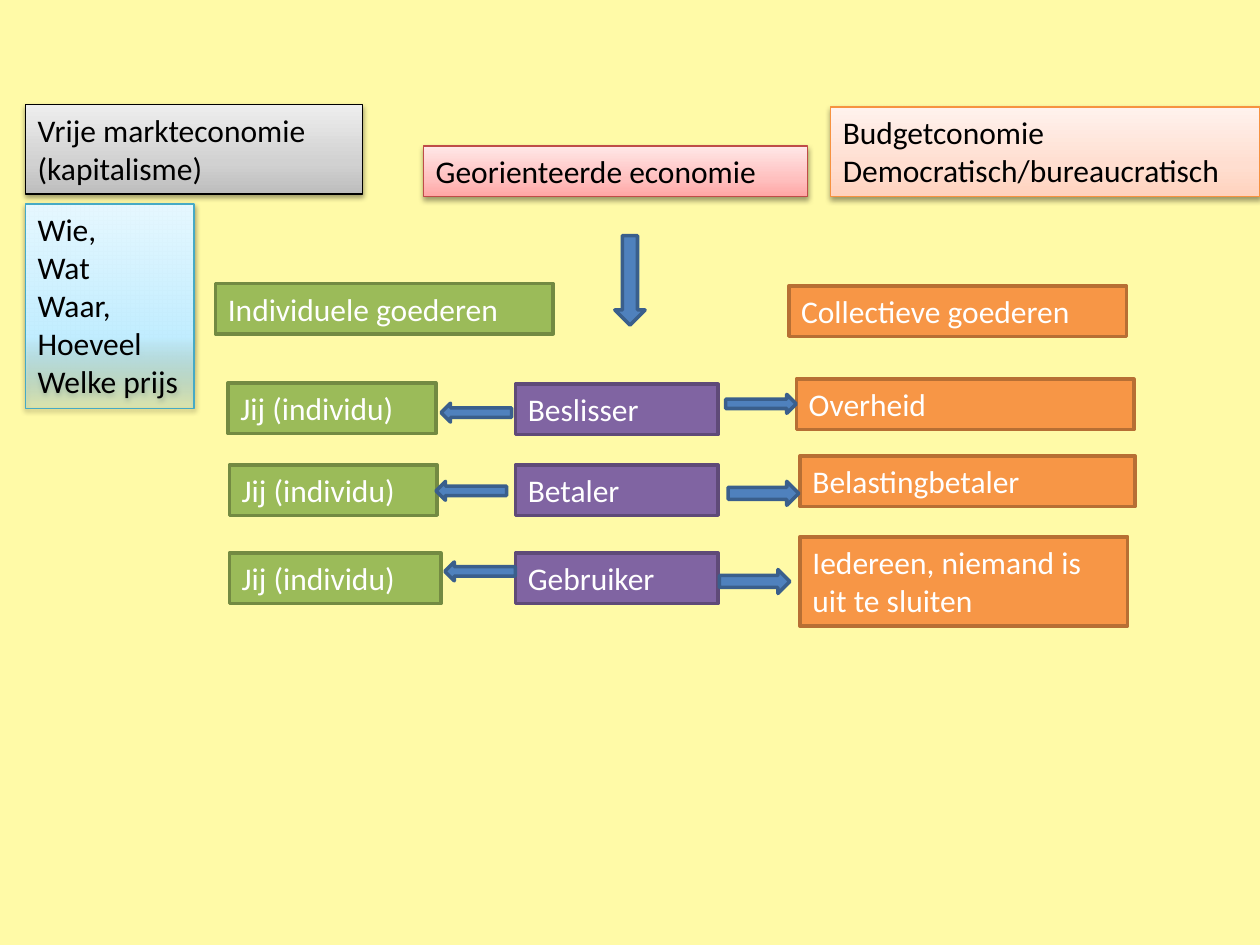
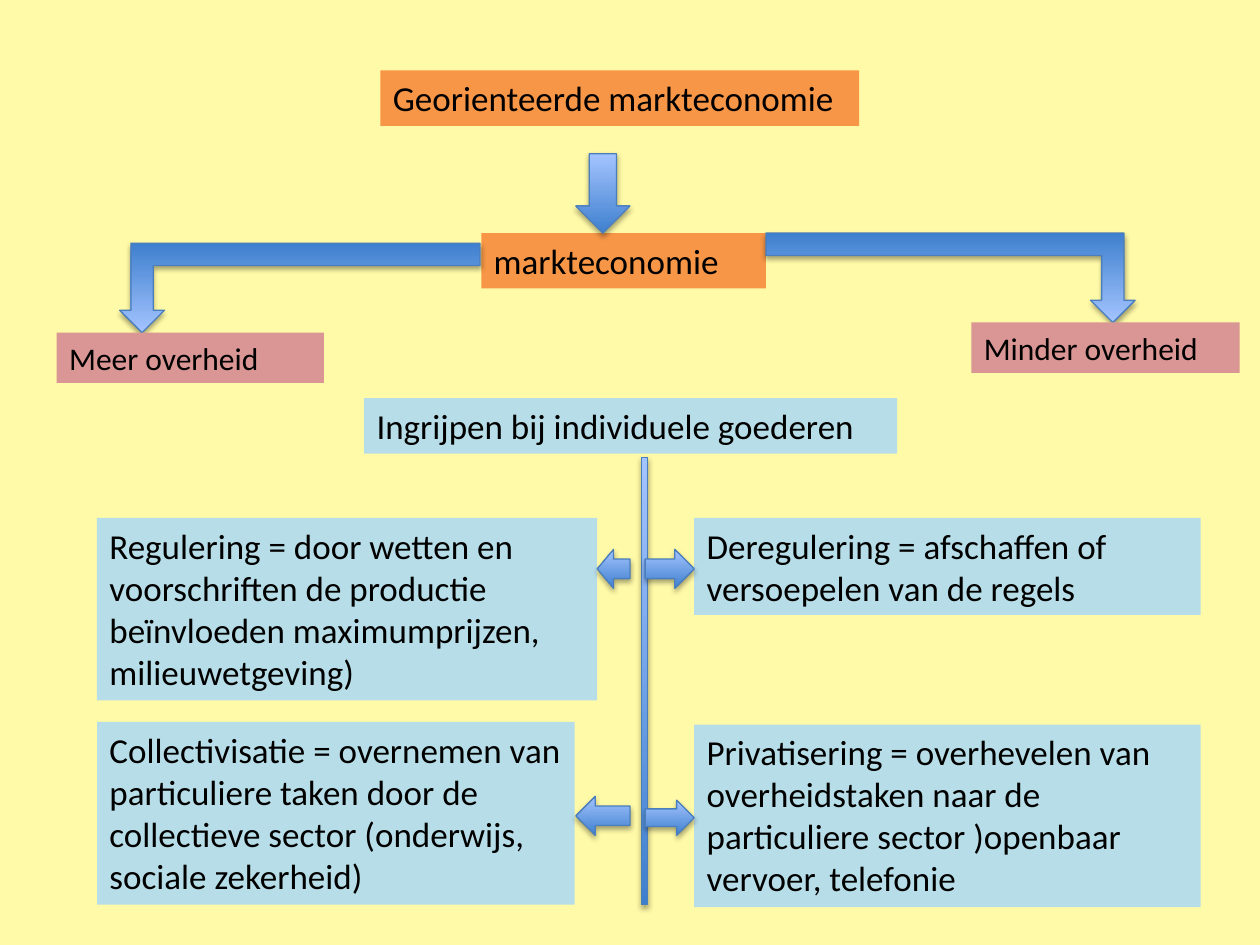
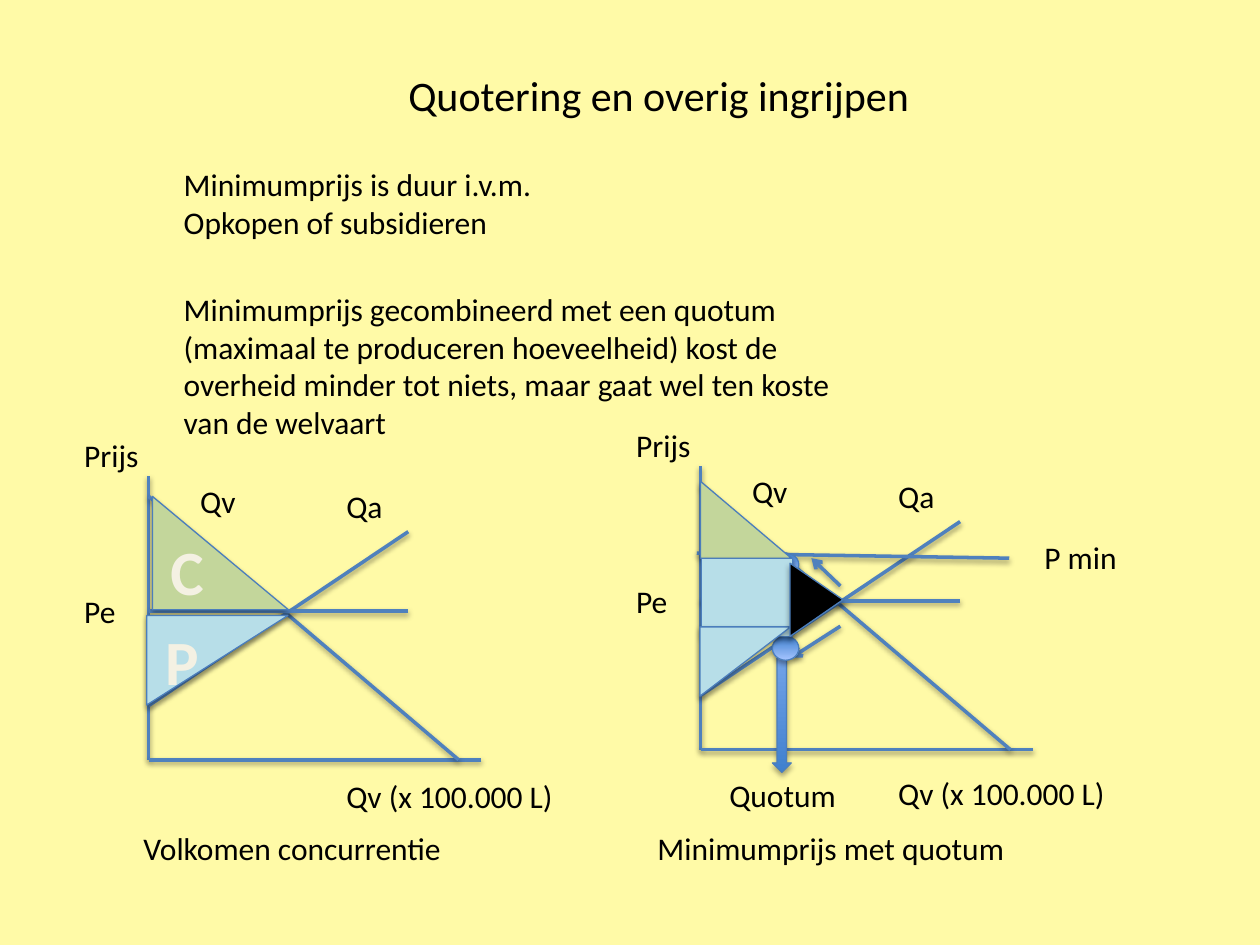
from dataclasses import dataclass

from lxml.etree import SubElement
from pptx import Presentation
from pptx.dml.color import RGBColor
from pptx.enum.shapes import MSO_CONNECTOR, MSO_SHAPE as SHAPE
from pptx.enum.text import MSO_ANCHOR, MSO_AUTO_SIZE, PP_ALIGN
from pptx.oxml.ns import qn
from pptx.util import Inches, Pt

COLUMNS, ROWS = 100, 75
CELL = Inches(0.1)
BACKGROUND = "FFFAA7"
INK = "000000"
AXIS_BLUE = "4F81BD"
OUTLINE_BLUE = "4B7EBC"
SOFT = (38, 3.1, 1.6)
DEEP = (35, 3.1, 1.8)


def gradient(*stops):
    return [(share, colour, alpha) for (share, colour), alpha in
            zip(stops, [100] * len(stops))]


def bright(colours, line, foot_alpha=100):
    stops = gradient(*zip((0, 35, 100), colours))
    stops[0] = (0, colours[0], foot_alpha)
    return dict(fill=stops, line=line, width=0.75, shadow=SOFT)


def outlined(fill, line):
    return dict(fill=fill, line=line, width=2, ink="FFFFFF")


def raised(fill):
    return dict(fill=fill, line=OUTLINE_BLUE, width=0.75, shadow=DEEP)


INDIVIDUAL = outlined("9BBB59", "738A42")
COLLECTIVE = outlined("F79646", "B76F34")
ROLE = outlined("8064A2", "5F4A78")
POINTER = outlined(AXIS_BLUE, "3A5F8C")
FREE_MARKET = bright(("BDBDBD", "D1D1D1", "EEEEEE"), "000000")
ORIENTED = bright(("FFA6A5", "FFC0BF", "FFE7E7"), "BF4C48")
BUDGET = bright(("FFD2BD", "FFDED0", "FFF2ED"), "F69240")
QUESTIONS = bright(("A7E6FF", "C1EDFF", "E7F8FF"), "46AAC5", 18)
FLOW = raised(gradient((0, "3F80CE"), (100, "A4C4FF")))
CONSUMER = raised("C3D69B")
PRODUCER = raised("B7DEE8")
LOSS = raised("000000")
ECONOMY = dict(fill="F79646", size=20)
MEASURE = dict(fill="B7DEE8", size=20)
DIRECTION = dict(fill="D99694")


def rgb(colour):
    return RGBColor.from_string(colour)


def add_gradient(shape, stops):
    shape.fill.gradient()
    shape.fill.gradient_angle = 90
    stop_list = shape.element.spPr.find(qn("a:gradFill")).find(qn("a:gsLst"))
    for stop in list(stop_list):
        stop_list.remove(stop)
    for share, colour, alpha in stops:
        stop = SubElement(stop_list, qn("a:gs"), pos=str(share * 1000))
        tone = SubElement(stop, qn("a:srgbClr"), val=colour)
        if alpha < 100:
            SubElement(tone, qn("a:alpha"), val=str(alpha * 1000))


def add_shadow(effects, shadow):
    opacity, blur, distance = shadow
    outer = SubElement(effects, qn("a:outerShdw"), blurRad=str(Pt(blur)),
                       dist=str(Pt(distance)), dir="5400000", rotWithShape="0")
    tone = SubElement(outer, qn("a:srgbClr"), val=INK)
    SubElement(tone, qn("a:alpha"), val=str(opacity * 1000))


def write(holder, text, size=18, ink=INK, align=PP_ALIGN.LEFT, bold=False, wrap=True):
    frame = holder.text_frame
    frame.text = text
    layout = dict(word_wrap=wrap, auto_size=MSO_AUTO_SIZE.SHAPE_TO_FIT_TEXT,
                  vertical_anchor=MSO_ANCHOR.TOP)
    for key, value in layout.items():
        setattr(frame, key, value)
    for paragraph in frame.paragraphs:
        paragraph.alignment = align
        for run in paragraph.runs:
            for key, value in dict(name="Calibri", size=Pt(size), bold=bold).items():
                setattr(run.font, key, value)
            run.font.color.rgb = rgb(ink)


@dataclass
class Region:
    slide: object
    left: float = 0
    top: float = 0

    def at(self, left, top):
        return Region(self.slide, self.left + left, self.top + top)

    def point(self, x, y):
        return round((self.left + x) * CELL), round((self.top + y) * CELL)

    def frame(self, left, top, width, height):
        return *self.point(left, top), round(width * CELL), round(height * CELL)

    def shape(self, kind, box, style, text="", rotation=0, flip=None):
        shape = self.slide.shapes.add_shape(kind, *self.frame(*box))
        shape.rotation = rotation
        if flip:
            shape.element.spPr.find(qn("a:xfrm")).set(flip, "1")
        if isinstance(style["fill"], str):
            shape.fill.solid()
            shape.fill.fore_color.rgb = rgb(style["fill"])
        else:
            add_gradient(shape, style["fill"])
        if "line" in style:
            shape.line.color.rgb = rgb(style["line"])
            shape.line.width = Pt(style["width"])
        else:
            shape.line.fill.background()
        shape.shadow.inherit = False
        if "shadow" in style:
            add_shadow(shape.element.spPr.find(qn("a:effectLst")), style["shadow"])
        if text:
            write(shape, text, style.get("size", 18), style.get("ink", INK))

    def card(self, box, style, text):
        self.shape(SHAPE.RECTANGLE, box, style, text)

    def label(self, box, text, **formats):
        holder = self.slide.shapes.add_textbox(*self.frame(*box))
        write(holder, text, **formats)
        return holder

    def line(self, start, end, arrow=False):
        connector = self.slide.shapes.add_connector(
            MSO_CONNECTOR.STRAIGHT, *self.point(*start), *self.point(*end))
        connector.line.color.rgb = rgb(AXIS_BLUE)
        connector.line.width = Pt(2)
        properties = connector.element.spPr
        if arrow:
            SubElement(properties.find(qn("a:ln")), qn("a:tailEnd"), type="arrow")
        add_shadow(SubElement(properties, qn("a:effectLst")), SOFT)


def economic_systems(region):
    region.card((0, 0, 26.8, 7.1), FREE_MARKET, "Vrije markteconomie (kapitalisme)")
    region.card((31.6, 3.3, 30.5, 4), ORIENTED, "Georienteerde economie")
    region.card((63.9, 0.2, 34.1, 7.1), BUDGET,
                "Budgetconomie\nDemocratisch/bureaucratisch")
    region.card((0, 7.9, 13.4, 16.2), QUESTIONS,
                "Wie,\nWat\nWaar, Hoeveel\nWelke prijs")


def goods_column(region, style, heading, answers):
    region.card((0, 0, 26.8, 4), style, heading)
    for text, *box in answers:
        region.card(box, style, text)


def roles(region):
    for text, top in (("Beslisser", 0), ("Betaler", 6.4), ("Gebruiker", 13.4)):
        region.card((0, top, 16.1, 4), ROLE, text)
    region.shape(SHAPE.DOWN_ARROW, (7.9, -11.8, 2.4, 7.1), POINTER)
    for left, top, height in ((16.7, 0.8, 1.5), (16.9, 7.7, 1.9), (16.2, 14.7, 1.9)):
        region.shape(SHAPE.RIGHT_ARROW, (left, top, 5.6, height), POINTER)
    for left, top in ((-5.9, 1.5), (-6.3, 7.7), (-5.6, 14.1)):
        region.shape(SHAPE.RIGHT_ARROW, (left, top, 5.6, 1.5), POINTER, rotation=180)


def goods_slide(region):
    you = "Jij (individu)"
    goods_column(region.at(17.1, 22.5), INDIVIDUAL, "Individuele goederen", (
        (you, 1, 7.9, 16.5, 4),
        (you, 1.1, 14.4, 16.5, 4),
        (you, 1.1, 21.4, 16.8, 4)))
    goods_column(region.at(62.6, 22.7), COLLECTIVE, "Collectieve goederen", (
        ("Overheid", 0.6, 7.4, 26.8, 4),
        ("Belastingbetaler", 0.9, 13.5, 26.6, 4),
        ("Iedereen, niemand is uit te sluiten", 0.9, 19.9, 26, 7.1)))
    roles(region.at(40.9, 30.5))
    economic_systems(region.at(2, 8.3))


def market_directions(region):
    region.card((25.7, 0, 38, 4.4), ECONOMY, "Georienteerde markteconomie")
    region.card((33.7, 12.9, 22.6, 4.4), ECONOMY, "markteconomie")
    region.shape(SHAPE.BENT_UP_ARROW, (5, 13.7, 28.6, 7.1), FLOW, rotation=180)
    region.shape(SHAPE.BENT_UP_ARROW, (56.3, 12.9, 29.3, 7.1), FLOW,
                 rotation=180, flip="flipH")
    region.shape(SHAPE.DOWN_ARROW, (41.2, 6.6, 4.3, 6.3), FLOW)
    region.card((0, 20.8, 21.2, 4), DIRECTION, "Meer overheid")
    region.card((72.6, 20, 21.3, 4), DIRECTION, "Minder overheid")


def interventions(region):
    region.card((21.2, 0, 42.3, 4.4), MEASURE, "Ingrijpen bij individuele goederen")
    measures = (
        ("Regulering = door wetten en voorschriften de productie beïnvloeden "
         "maximumprijzen, milieuwetgeving)", 0, 9.5, 39.7, 14.5),
        ("Deregulering = afschaffen of versoepelen van de regels",
         47.4, 9.5, 40.2, 7.7),
        ("Collectivisatie = overnemen van particuliere taken door de "
         "collectieve sector (onderwijs, sociale zekerheid)", 0, 25.7, 37.9, 14.5),
        ("Privatisering = overhevelen van overheidstaken naar de particuliere "
         "sector )openbaar vervoer, telefonie", 47.4, 25.9, 40.2, 14.5))
    for text, *box in measures:
        region.card(box, MEASURE, text)
    region.shape(SHAPE.RECTANGLE, (43.2, 4.7, 0.5, 35.5), FLOW)
    for kind, *box in ((SHAPE.RIGHT_ARROW, 43.5, 12, 3.9, 3.1),
                       (SHAPE.RIGHT_ARROW, 43.5, 31.9, 3.9, 2.8),
                       (SHAPE.LEFT_ARROW, 39.7, 12, 2.6, 3.1),
                       (SHAPE.LEFT_ARROW, 38, 31.6, 4.3, 3.1)):
        region.shape(kind, box, FLOW)


def intervention_slide(region):
    market_directions(region.at(4.5, 5.6))
    interventions(region.at(7.7, 31.6))


def market_diagram(region, caption, caption_box, quantity_top):
    for start, end in (((0, 0), (0, 22.5)), ((26.4, 22.5), (0, 22.5)),
                       ((0, 1.6), (24.6, 22.5)), ((20.6, 4.4), (0, 18.2)),
                       ((20.6, 10.7), (0, 10.7))):
        region.line(start, end)
    for text, left, top, width in (("Qv", 3.1, 0, 5.8), ("Qa", 14.7, 0.4, 5.8),
                                   ("Prijs", -6.1, -3.7, 7.9), ("Pe", -6.1, 8.7, 5.8),
                                   ("Qv (x 100.000 L)", 14.7, quantity_top, 19.9)):
        region.label((left, top, width, 4), text)
    region.label(caption_box, caption)


def free_competition(region):
    market_diagram(region, "Volkomen concurrentie", (-1.4, 27.5, 30.7, 4), 23.4)
    region.shape(SHAPE.RIGHT_TRIANGLE, (0.3, 1.6, 10.8, 9), CONSUMER)
    region.shape(SHAPE.RIGHT_TRIANGLE, (1.9, 9, 7.1, 11.2), PRODUCER, rotation=90)
    for letter, box, wrap in (("C", (-1.6, 4, 9.3, 7.1), True),
                              ("P", (0.3, 11.1, 4.7, 7.1), False)):
        region.label(box, letter, size=36, ink="F4F1E3", bold=True,
                     align=PP_ALIGN.CENTER, wrap=wrap)


def minimum_price(region):
    market_diagram(region, "Minimumprijs met quotum", (-4.4, 28.3, 30.7, 4), 23.9)
    region.line((-0.3, 6.9), (24.5, 7.3))
    region.label((26.3, 5.2, 9.9, 4), "P min")
    region.label((1.3, 24.1, 11.6, 4), "Quotum")
    region.shape(SHAPE.DOWN_ARROW, (5.7, 6.9, 1.5, 17.4), FLOW)
    region.line((11.1, 9.5), (8.8, 7.3), arrow=True)
    region.line((11.1, 12.7), (7.2, 15.2), arrow=True)
    for top, height in ((6.9, 1.8), (13.5, 1.9)):
        region.shape(SHAPE.OVAL, (5.7, top, 2.1, height), FLOW, flip="flipV")
    region.shape(SHAPE.RIGHT_TRIANGLE, (0, 1.2, 7.2, 6.1), CONSUMER)
    region.shape(SHAPE.RECTANGLE, (0.1, 7.3, 7.2, 6.2), PRODUCER)
    region.shape(SHAPE.RIGHT_TRIANGLE, (0.8, 11.9, 5.5, 7.2), PRODUCER, rotation=90)
    region.shape(SHAPE.ISOSCELES_TRIANGLE, (6.3, 8.5, 5.8, 4.2), LOSS, rotation=90)


def quota_slide(region):
    title = region.slide.shapes.title
    sides = ("left", "top", "width", "height")
    for side, value in zip(sides, region.frame(31.4, 5, 46, 5)):
        setattr(title, side, value)
    write(title, "Quotering en overig ingrijpen", size=24)
    region.label((13.6, 12.6, 39.9, 7.1),
                 "Minimumprijs is duur i.v.m.\nOpkopen of subsidieren")
    region.label((13.6, 22.5, 53.3, 13.1),
                 "Minimumprijs gecombineerd met een quotum (maximaal te produceren "
                 "hoeveelheid) kost de overheid minder tot niets, maar gaat wel ten "
                 "koste van de welvaart")
    free_competition(region.at(11.8, 37.8))
    minimum_price(region.at(55.6, 37))


def main():
    deck = Presentation()
    deck.slide_width, deck.slide_height = COLUMNS * CELL, ROWS * CELL
    background = deck.slide_master.background.fill
    background.solid()
    background.fore_color.rgb = rgb(BACKGROUND)
    title_only, blank = deck.slide_layouts[5], deck.slide_layouts[6]
    for build, layout in ((goods_slide, blank), (intervention_slide, blank),
                          (quota_slide, title_only)):
        build(Region(deck.slides.add_slide(layout)))
    deck.save("out.pptx")


if __name__ == "__main__":
    main()
